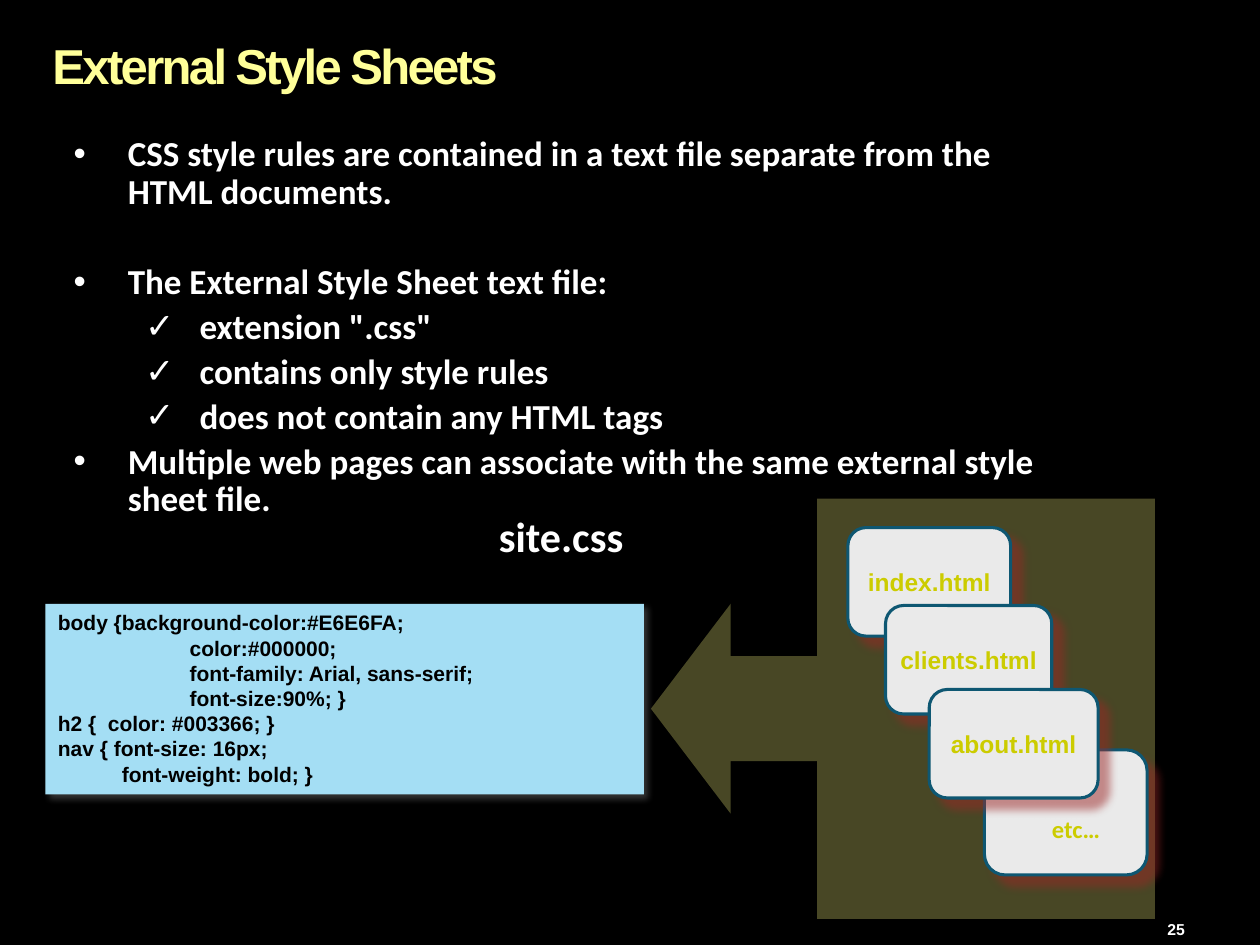
from dataclasses import dataclass

from lxml.etree import SubElement
from pptx import Presentation
from pptx.dml.color import RGBColor
from pptx.enum.shapes import MSO_SHAPE
from pptx.enum.text import MSO_ANCHOR, MSO_AUTO_SIZE, PP_ALIGN
from pptx.oxml.ns import qn
from pptx.util import Pt

BLACK = RGBColor(0x00, 0x00, 0x00)
WHITE = RGBColor(0xFF, 0xFF, 0xFF)
TITLE_YELLOW = RGBColor(0xFF, 0xFF, 0x99)
CODE_BLUE = RGBColor(0xA4, 0xDE, 0xF4)
CALLOUT_YELLOW = RGBColor(0xF0, 0xED, 0x7B)
CARD_GREY = RGBColor(0xEA, 0xEA, 0xEA)
CARD_EDGE = RGBColor(0x0E, 0x57, 0x72)
CARD_TEXT = RGBColor(0xCC, 0xCC, 0x00)
SHADOW_GREY = RGBColor(0x80, 0x80, 0x80)
SHADOW_RED = RGBColor(0x9C, 0x28, 0x28)
BULLET_HANG = 31


@dataclass
class Area:
    left: float
    top: float
    width: float
    height: float

    def lengths(self) -> list:
        return [Pt(value) for value in (self.left, self.top, self.width, self.height)]


@dataclass
class Style:
    size: float
    font: str
    color: RGBColor


@dataclass
class Shadow:
    color: RGBColor
    opacity: int
    blur: float
    distance: float


@dataclass
class Bullet:
    text: str
    level: int = 0
    before: float = 4


@dataclass
class Card:
    area: Area
    label: str = ""


def add_span(para, text: str, style: Style):
    span = para.add_run()
    span.text = text
    span.font.size = Pt(style.size)
    span.font.name = style.font
    span.font.bold = True
    span.font.color.rgb = style.color
    return span


def add_label(page, area: Area, text: str, style: Style, anchor=MSO_ANCHOR.TOP) -> None:
    frame = page.shapes.add_textbox(*area.lengths()).text_frame
    frame.vertical_anchor = anchor
    add_span(frame.paragraphs[0], text, style)


def add_block(page, kind, area: Area, fill: RGBColor):
    box = page.shapes.add_shape(kind, *area.lengths())
    box.fill.solid()
    box.fill.fore_color.rgb = fill
    box.line.fill.background()
    box.shadow.inherit = False
    return box


def add_alpha(color, percent: int) -> None:
    SubElement(color, qn("a:alpha"), val=str(percent * 1000))


def cast_shadow(box, shadow: Shadow) -> None:
    effects = box._element.spPr.find(qn("a:effectLst"))
    outer = SubElement(effects, qn("a:outerShdw"), blurRad=str(Pt(shadow.blur)),
                       dist=str(Pt(shadow.distance)), dir=str(45 * 60000),
                       algn="tl", rotWithShape="0")
    color = SubElement(outer, qn("a:srgbClr"), val=str(shadow.color))
    add_alpha(color, shadow.opacity)


def place(holder, area: Area):
    """Move a placeholder and return its text frame without margins."""
    holder.left, holder.top, holder.width, holder.height = area.lengths()
    frame = holder.text_frame
    frame.margin_left = frame.margin_right = frame.margin_top = frame.margin_bottom = 0
    frame.vertical_anchor = MSO_ANCHOR.TOP
    frame.auto_size = MSO_AUTO_SIZE.NONE
    frame.word_wrap = True
    return frame


def next_para(frame, index: int):
    return frame.add_paragraph() if index else frame.paragraphs[0]


def add_bullet(para, bullet: Bullet, style: Style) -> None:
    margin, mark = ((BULLET_HANG, "•"), (72, "✓"))[bullet.level]
    properties = para._p.get_or_add_pPr()
    properties.set("marL", str(Pt(margin)))
    properties.set("indent", str(-Pt(BULLET_HANG)))
    SubElement(properties, qn("a:buFont"), typeface="Arial")
    SubElement(properties, qn("a:buChar"), char=mark)
    para.level = bullet.level
    para.line_spacing = 0.9
    para.space_before = Pt(bullet.before)
    add_span(para, bullet.text, style)


def add_card(page, card: Card, style: Style) -> None:
    box = add_block(page, MSO_SHAPE.ROUNDED_RECTANGLE, card.area, CARD_GREY)
    box.line.color.rgb = CARD_EDGE
    box.line.width = Pt(1.75)
    cast_shadow(box, Shadow(SHADOW_RED, 50, 5, 8.5))
    if card.label:
        frame = box.text_frame
        frame.word_wrap = False
        frame.vertical_anchor = MSO_ANCHOR.MIDDLE
        frame.paragraphs[0].alignment = PP_ALIGN.CENTER
        add_span(frame.paragraphs[0], card.label, style)


BULLETS = [
    Bullet("CSS style rules are contained in a text file separate from the HTML documents.",
           before=0),
    Bullet("The External Style Sheet text file:", before=30),
    Bullet('extension ".css"', 1),
    Bullet("contains only style rules", 1),
    Bullet("does not contain any HTML tags", 1),
    Bullet("Multiple web pages can associate with the same external style sheet file."),
]
CODE_LINES = [
    "body {background-color:#E6E6FA;",
    "          \t color:#000000;",
    "          \t font-family: Arial, sans-serif;",
    "          \t font-size:90%; }",
    "h2 {  color: #003366; }",
    "nav { font-size: 16px;",
    "           font-weight: bold; }",
]
CARDS = [
    Card(Area(562.5, 428.5, 93, 71.5)),
    Card(Area(484.5, 301.5, 93, 62), "index.html"),
    Card(Area(506, 346, 95, 62), "clients.html"),
    Card(Area(531, 394, 96.5, 62), "about.html"),
]


def main() -> None:
    deck = Presentation()
    deck.slide_width, deck.slide_height = Pt(720), Pt(540)
    page = deck.slides.add_slide(deck.slide_layouts[1])
    page.background.fill.solid()
    page.background.fill.fore_color.rgb = BLACK

    # Title
    para = place(page.shapes.title, Area(30, 24, 497, 30)).paragraphs[0]
    para.alignment = PP_ALIGN.LEFT
    para.line_spacing = 0.9
    span = add_span(para, "External Style Sheets", Style(28, "Arial", TITLE_YELLOW))
    span.font._element.set("spc", "-150")

    # Bullet list
    frame = place(page.placeholders[1], Area(42, 78, 570, 246))
    for index, bullet in enumerate(BULLETS):
        add_bullet(next_para(frame, index), bullet, Style(20, "Calibri", WHITE))

    # Style sheet with its file name
    add_label(page, Area(278, 288, 86, 36), "site.css", Style(24, "Calibri", WHITE))
    sheet = add_block(page, MSO_SHAPE.RECTANGLE, Area(26, 345, 342, 109), CODE_BLUE)
    cast_shadow(sheet, Shadow(SHADOW_GREY, 40, 4, 3))
    frame = sheet.text_frame
    frame.vertical_anchor = MSO_ANCHOR.TOP
    for index, line in enumerate(CODE_LINES):
        para = next_para(frame, index)
        if "\t" in line:
            tabs = SubElement(para._p.get_or_add_pPr(), qn("a:tabLst"))
            SubElement(tabs, qn("a:tab"), pos=str(Pt(72)), algn="l")
        para.alignment = PP_ALIGN.LEFT
        add_span(para, line, Style(12, "Arial", BLACK))

    # Arrow callout holding the web pages
    callout = add_block(page, MSO_SHAPE.LEFT_ARROW_CALLOUT, Area(372, 285, 288, 240),
                        CALLOUT_YELLOW)
    for index, value in enumerate((0.25, 0.25, 0.19, 0.67)):
        callout.adjustments[index] = value
    add_alpha(callout._element.spPr.find(qn("a:solidFill"))[0], 30)
    for card in CARDS:
        add_card(page, card, Style(14, "Arial", CARD_TEXT))
    add_label(page, Area(594, 461.5, 42.5, 24.5), "etc…", Style(14, "Calibri", CARD_TEXT))

    # Page number
    add_label(page, Area(660, 511, 47.5, 29), "25", Style(9, "Arial", WHITE),
              MSO_ANCHOR.BOTTOM)

    deck.save("out.pptx")


if __name__ == "__main__":
    main()
